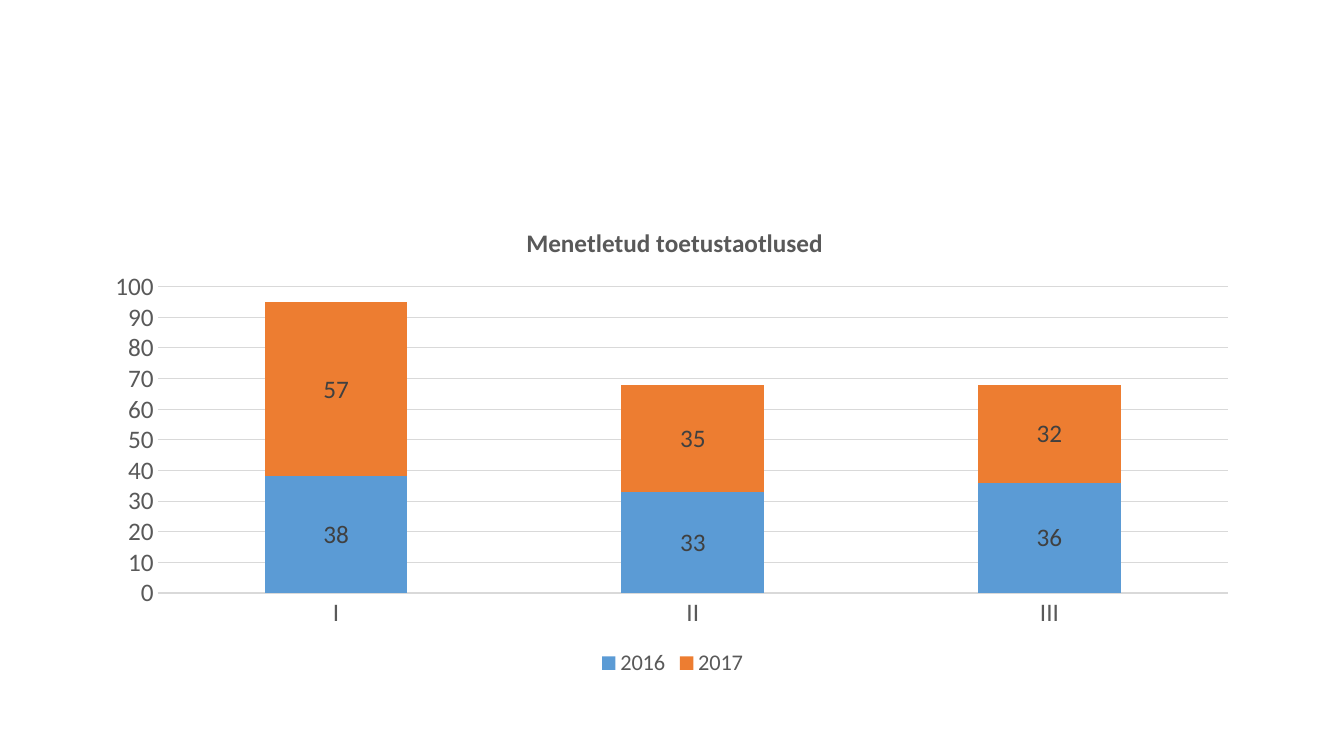
from lxml.etree import SubElement
from pptx import Presentation
from pptx.chart.data import CategoryChartData as ChartData
from pptx.dml.color import RGBColor
from pptx.enum.chart import XL_CHART_TYPE as Kind
from pptx.enum.chart import XL_LABEL_POSITION as Spot
from pptx.enum.chart import XL_LEGEND_POSITION as Side
from pptx.enum.chart import XL_TICK_MARK as Tick
from pptx.oxml.ns import qn
from pptx.util import Inches, Pt

BLUE = RGBColor(0x5B, 0x9B, 0xD5)
ORANGE = RGBColor(0xED, 0x7D, 0x31)
GREY = RGBColor(0x59, 0x59, 0x59)
DARK = RGBColor(0x40, 0x40, 0x40)
PALE = RGBColor(0xD9, 0xD9, 0xD9)


def style(font, size=18, color=GREY, bold=False):
    font.name = "Calibri"
    font.size = Pt(size)
    font.bold = bold
    font.color.rgb = color


def place(part, index, **spots):
    """Fix a chart part at fractions of the chart area."""
    for old in part.findall(qn("c:layout")):
        part.remove(old)
    layout = SubElement(part, qn("c:layout"))
    part.insert(index, layout)
    manual = SubElement(layout, qn("c:manualLayout"))
    for tag, val in spots.items():
        SubElement(manual, qn("c:" + tag), val=str(val))


deck = Presentation()
deck.slide_width = Inches(13.33)
deck.slide_height = Inches(7.5)
slide = deck.slides.add_slide(deck.slide_layouts[6])

# Stacked columns
data = ChartData()
data.categories = ["I", "II", "III"]
data.add_series("2016", (38, 33, 36))
data.add_series("2017", (57, 35, 32))
chart = slide.shapes.add_chart(
    Kind.COLUMN_STACKED, Inches(0.92), Inches(2), Inches(11.5), Inches(4.76), data
).chart
style(chart.font, size=10)

plot = chart.plots[0]
plot.gap_width = 150
plot.overlap = 100
plot.vary_by_categories = False
for series, color in zip(plot.series, (BLUE, ORANGE)):
    series.format.fill.solid()
    series.format.fill.fore_color.rgb = color
    labels = series.data_labels
    labels.show_value = True
    labels.position = Spot.CENTER
    style(labels.font, color=DARK)

# Title
chart.has_title = True
frame = chart.chart_title.text_frame
frame.text = "Menetletud toetustaotlused"
style(frame.paragraphs[0].runs[0].font, bold=True)
chart.chart_title.include_in_layout = False

# Axes
for axis in (chart.category_axis, chart.value_axis):
    axis.major_tick_mark = Tick.NONE
    axis.minor_tick_mark = Tick.NONE
    style(axis.tick_labels.font)
chart.value_axis.minimum_scale = 0
chart.value_axis.maximum_scale = 100
chart.value_axis.major_unit = 10
chart.value_axis.format.line.fill.background()
for line in (chart.category_axis.format.line,
             chart.value_axis.major_gridlines.format.line):
    line.color.rgb = PALE
    line.width = Pt(0.75)

# Legend
chart.has_legend = True
chart.legend.position = Side.BOTTOM
chart.legend.include_in_layout = False
style(chart.legend.font, size=16)

# Room for the title and the plot
root = chart.element.find(qn("c:chart"))
place(root.find(qn("c:title")), 1, xMode="edge", yMode="edge", x=0.37, y=0.04)
place(root.find(qn("c:plotArea")), 0, layoutTarget="inner", xMode="edge",
      yMode="edge", x=0.056, y=0.177, w=0.923, h=0.639)

deck.save("out.pptx")
